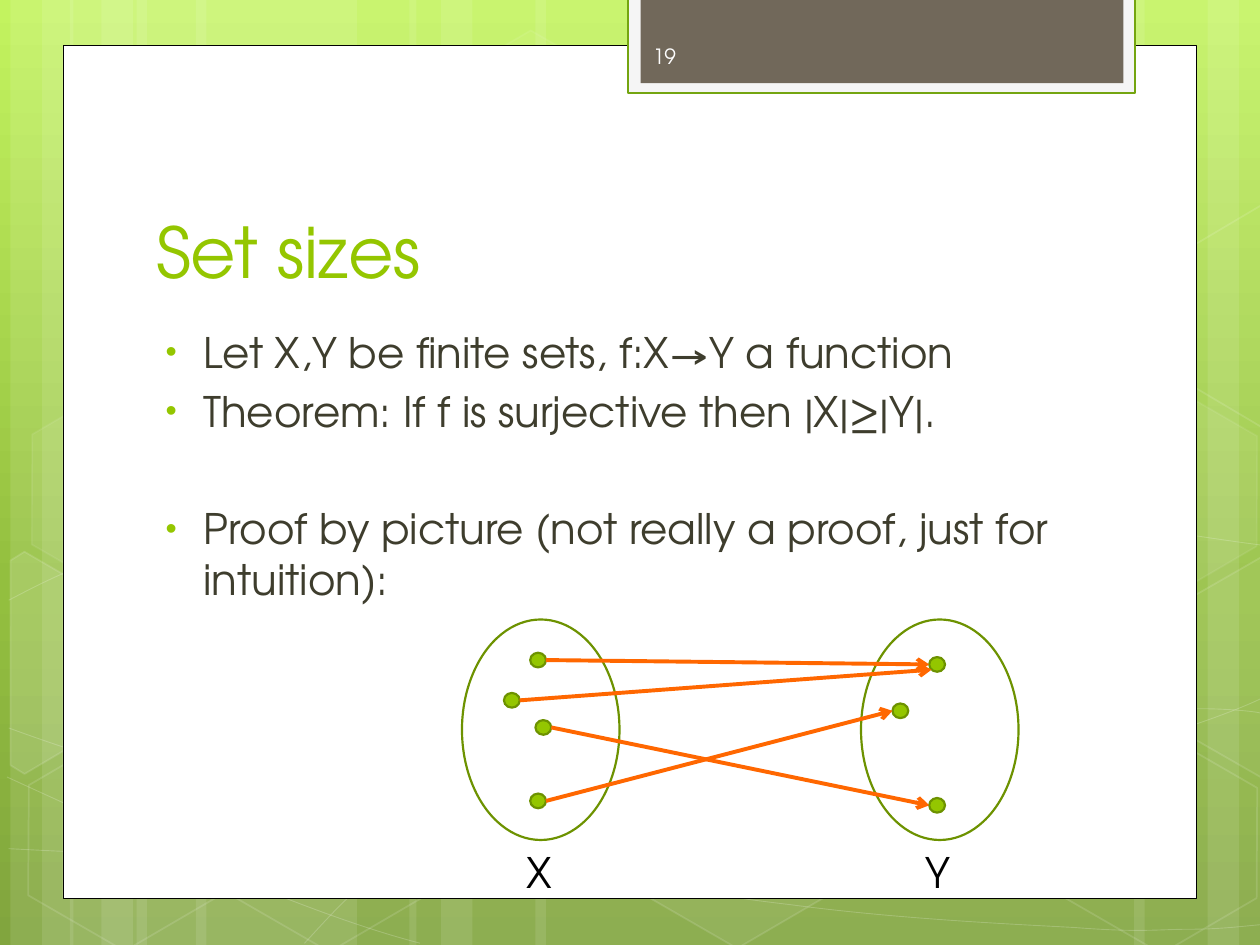
from copy import deepcopy
from math import cos, radians, sin

from lxml.etree import SubElement
from pptx import Presentation
from pptx.dml.color import RGBColor
from pptx.enum.shapes import MSO_CONNECTOR, MSO_SHAPE
from pptx.enum.text import MSO_ANCHOR, MSO_AUTO_SIZE, PP_ALIGN
from pptx.oxml.ns import qn
from pptx.util import Pt

FONT = "TeX Gyre Adventor"
GREEN, DARK_GREEN, ORANGE, WHITE = "94C600", "6D9200", "FF6700", "FFFFFF"


def paint(sp, fill=None, line=None, width=1, fill_alpha=100, line_alpha=100):
    """Set fill and outline; None means no paint, alphas are percentages."""
    sp.shadow.inherit = False
    for target, color in ((sp.fill, fill), (sp.line.fill, line)):
        if color is None:
            target.background()
        else:
            target.solid()
            target.fore_color.rgb = RGBColor.from_string(color)
    if line:
        sp.line.width = Pt(width)
    for where, alpha in (("a:solidFill", fill_alpha), ("a:ln/a:solidFill", line_alpha)):
        if alpha < 100:
            clr = sp.element.spPr.xpath(where + "/a:srgbClr")[0]
            SubElement(clr, qn("a:alpha"), val=str(alpha * 1000))


def style_text(tf, size, color, anchor=MSO_ANCHOR.TOP):
    tf.word_wrap = True
    tf.auto_size = MSO_AUTO_SIZE.NONE
    tf.vertical_anchor = anchor
    for p in tf.paragraphs:
        p.alignment = PP_ALIGN.LEFT
        for r in p.runs:
            r.font.name = FONT
            r.font.size = Pt(size)
            r.font.color.rgb = RGBColor.from_string(color)


prs = Presentation()
prs.slide_width, prs.slide_height = Pt(720), Pt(540)
s = prs.slides.add_slide(prs.slide_layouts[1])
shapes = s.shapes

# Background gradient
bg = s.background.fill
bg.gradient()
bg.gradient_angle = 270
stops = s.element.find(".//" + qn("a:gsLst"))
stops.append(deepcopy(stops[-1]))
for stop, (pos, color) in zip(
    bg.gradient_stops, ((0, "C3F35F"), (0.62, "93BF3F"), (1, "81A53E"))
):
    stop.position = pos
    stop.color.rgb = RGBColor.from_string(color)

# Translucent vertical stripes: left, width, rotation
stripes = [(78, 126, 0), (6, 36, 0), (24, 60, 0), (112, 126, 0), (40, 36, 0),
           (58, 60, 0), (528, 126, 180), (690, 36, 180), (648, 60, 180),
           (306, 222, 0), (234, 36, 0), (252, 60, 0)]
for x, w, rotation in stripes:
    sp = shapes.add_shape(MSO_SHAPE.RECTANGLE, Pt(x), 0, Pt(w), Pt(540))
    sp.rotation = rotation
    paint(sp, WHITE, fill_alpha=10)

# Faint waves: a start point, then three Bezier points for each segment
waves = [
    [(5, 485), (44, 487), (83, 489), (137, 488), (191, 487), (258, 486), (330, 479),
     (402, 472), (504, 458), (570, 444), (636, 431), (703, 409), (725, 397)],
    [(5, 343), (26, 332), (47, 321), (87, 310), (128, 300), (186, 284), (250, 279),
     (314, 274), (392, 273), (471, 279), (550, 284), (682, 307), (725, 312)],
    [(4, 444), (91, 484), (178, 523), (240, 539)],
    [(5, 416), (27, 424), (50, 432), (92, 444), (134, 454), (197, 472), (257, 485),
     (317, 497), (392, 510), (452, 517), (512, 525), (576, 528), (614, 530),
     (652, 533), (662, 531), (680, 531), (699, 531), (712, 529), (725, 528)],
    [(174, 539), (187, 525), (200, 510), (217, 498), (235, 485), (259, 470), (279, 460),
     (300, 450), (312, 446), (338, 438), (364, 431), (413, 421), (438, 416),
     (464, 411), (467, 411), (490, 410), (512, 408), (547, 405), (572, 405),
     (597, 404), (638, 405), (638, 405), (654, 405), (670, 405), (686, 405),
     (699, 405), (711, 406), (718, 407), (722, 408), (722, 407), (724, 408)],
]
for wave in waves:
    (x, y), *rest = [(Pt(a), Pt(b)) for a, b in wave]
    builder = shapes.build_freeform(x, y)
    builder.add_line_segments(rest, close=False)
    sp = builder.convert_to_shape()
    paint(sp, None, WHITE, 0.5, line_alpha=20)
    # Join every three straight segments into one cubic curve
    path = sp.element.spPr.xpath(".//a:path")[0]
    segments = path.findall(qn("a:lnTo"))
    for i in range(0, len(segments), 3):
        curve = SubElement(path, qn("a:cubicBezTo"))
        for segment in segments[i:i + 3]:
            curve.append(segment[0])
            path.remove(segment)

# Hexagons: left, top, fill alpha, line alpha
hexagons = [(240.5, 26, 4, 8), (358, 424, 6, 12), (8, 425.5, None, 12),
            (10, 225, 7, 8), (125, 426, None, 12), (542, 326, 10, 12),
            (600.5, 427, None, 12), (600.5, 226, 7, 8)]
for x, y, fill_alpha, line_alpha in hexagons:
    sp = shapes.add_shape(MSO_SHAPE.HEXAGON, Pt(x), Pt(y), Pt(126), Pt(109.4))
    sp.adjustments[0] = 0.285
    sp.rotation = 30
    paint(sp, WHITE if fill_alpha else None, WHITE, 1, fill_alpha or 100, line_alpha)

# Hexagons cut off by the slide edges: fill alpha, centre, corners as they appear
cut_hexagons = [
    (10, (26, 385.2),
     [(6, 320), (14, 315), (69, 347), (68, 410), (14, 442), (6, 437)]),
    (4, (709.2, 374.4),
     [(667, 349), (721, 318), (726, 321), (726, 441), (721, 444), (667, 413)]),
    (None, (709.2, 173.5),
     [(667, 149), (721, 117), (727, 121), (726, 241), (721, 244), (667, 212)]),
]
c, d = cos(radians(30)), sin(radians(30))
for fill_alpha, (cx, cy), corners in cut_hexagons:
    # Turn the corners back by 30 degrees, as the shape itself is rotated
    (x, y), *rest = [(Pt(cx + (a - cx) * c + (b - cy) * d),
                      Pt(cy - (a - cx) * d + (b - cy) * c)) for a, b in corners]
    builder = shapes.build_freeform(x, y)
    builder.add_line_segments(rest, close=True)
    sp = builder.convert_to_shape()
    sp.rotation = 30
    paint(sp, WHITE if fill_alpha else None, WHITE, 1, fill_alpha or 100, 12)

# White page and the tab at its top
panels = [(36, 26, 648, 487.2, WHITE, "000000", 0.5),
          (359, -1.5, 289.7, 54.8, "F5F5F5", "74A510", 1.25),
          (366, -1.5, 276, 49, "71685A", None, 0)]
for x, y, w, h, fill, line, width in panels:
    sp = shapes.add_shape(MSO_SHAPE.RECTANGLE, Pt(x), Pt(y), Pt(w), Pt(h))
    paint(sp, fill, line, width)

# Title and list, brought in front of the page
title, body = shapes.title, s.placeholders[1]
for ph, (x, y, w, h) in ((title, (82, 80.6, 553, 90)), (body, (82, 183, 533.5, 303))):
    ph.left, ph.top, ph.width, ph.height = Pt(x), Pt(y), Pt(w), Pt(h)
    ph.element.getparent().append(ph.element)
title.text_frame.text = "Set sizes"
style_text(title.text_frame, 40, GREEN, MSO_ANCHOR.BOTTOM)

tf = body.text_frame
tf.text = "\n".join([
    "Let X,Y be finite sets, f:X→Y a function",
    "Theorem: If f is surjective then |X|≥|Y|.",
    "Proof by picture (not really a proof, just for intuition):",
])
style_text(tf, 24, "3E3D2D")
for p, gap in zip(tf.paragraphs, (4.8, 4.8, 38.3)):
    p.space_before = Pt(gap)
    pPr = p._p.get_or_add_pPr()
    pPr.set("marL", str(Pt(27)))
    pPr.set("indent", str(Pt(-21.6)))
    SubElement(SubElement(pPr, qn("a:buClr")), qn("a:srgbClr"), val=GREEN)
    SubElement(pPr, qn("a:buSzPct"), val="76000")
    SubElement(pPr, qn("a:buChar"), char="•")

# Slide number and set names
labels = [("19", 366, 17.6, 105, 29, 12, "FEFEFE", MSO_ANCHOR.MIDDLE),
          ("X", 294, 480, 30, 36, 24, "000000", MSO_ANCHOR.TOP),
          ("Y", 522, 480, 30, 36, 24, "000000", MSO_ANCHOR.TOP)]
for text, x, y, w, h, size, color, anchor in labels:
    tf = shapes.add_textbox(Pt(x), Pt(y), Pt(w), Pt(h)).text_frame
    tf.text = text
    style_text(tf, size, color, anchor)

# The two sets and their elements
for x in (264, 492):
    sp = shapes.add_shape(MSO_SHAPE.OVAL, Pt(x), Pt(354), Pt(90), Pt(126))
    paint(sp, None, DARK_GREEN, 1.25)

DOT_W, DOT_H = 9, 8.4
dots = {"x1": (303, 373), "x2": (288, 396), "x3": (306, 411.5), "x4": (303, 453.5),
        "y1": (531, 375.5), "y2": (510, 402), "y3": (531, 456)}
for x, y in dots.values():
    sp = shapes.add_shape(MSO_SHAPE.OVAL, Pt(x), Pt(y), Pt(DOT_W), Pt(DOT_H))
    paint(sp, GREEN, DARK_GREEN, 1.25)

# Arrows of f: source, target, end point within the target dot
mapping = [("x1", "y1", (0, DOT_H / 2)), ("x3", "y3", (0, DOT_H / 2)),
           ("x4", "y2", (0, DOT_H / 2)), ("x2", "y1", (1.3, 7.2))]
for source, target, (dx, dy) in mapping:
    (x1, y1), (x2, y2) = dots[source], dots[target]
    cn = shapes.add_connector(MSO_CONNECTOR.STRAIGHT, Pt(x1 + DOT_W), Pt(y1 + DOT_H / 2),
                              Pt(x2 + dx), Pt(y2 + dy))
    cn.line.width = Pt(2.25)
    cn.line.color.rgb = RGBColor.from_string(ORANGE)
    SubElement(cn.line._get_or_add_ln(), qn("a:tailEnd"), type="arrow")
    SubElement(cn.element.spPr, qn("a:effectLst"))

prs.save("out.pptx")
